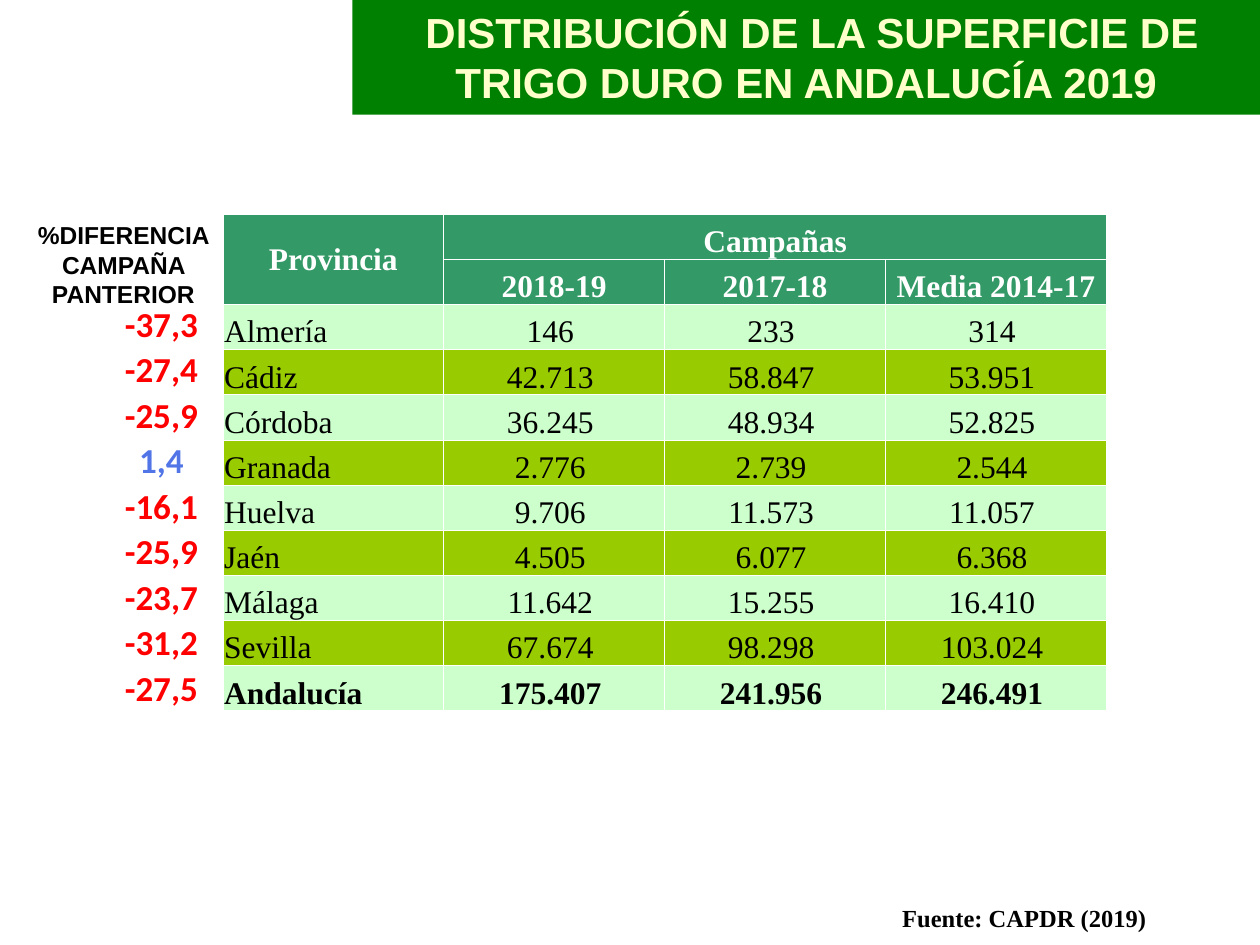
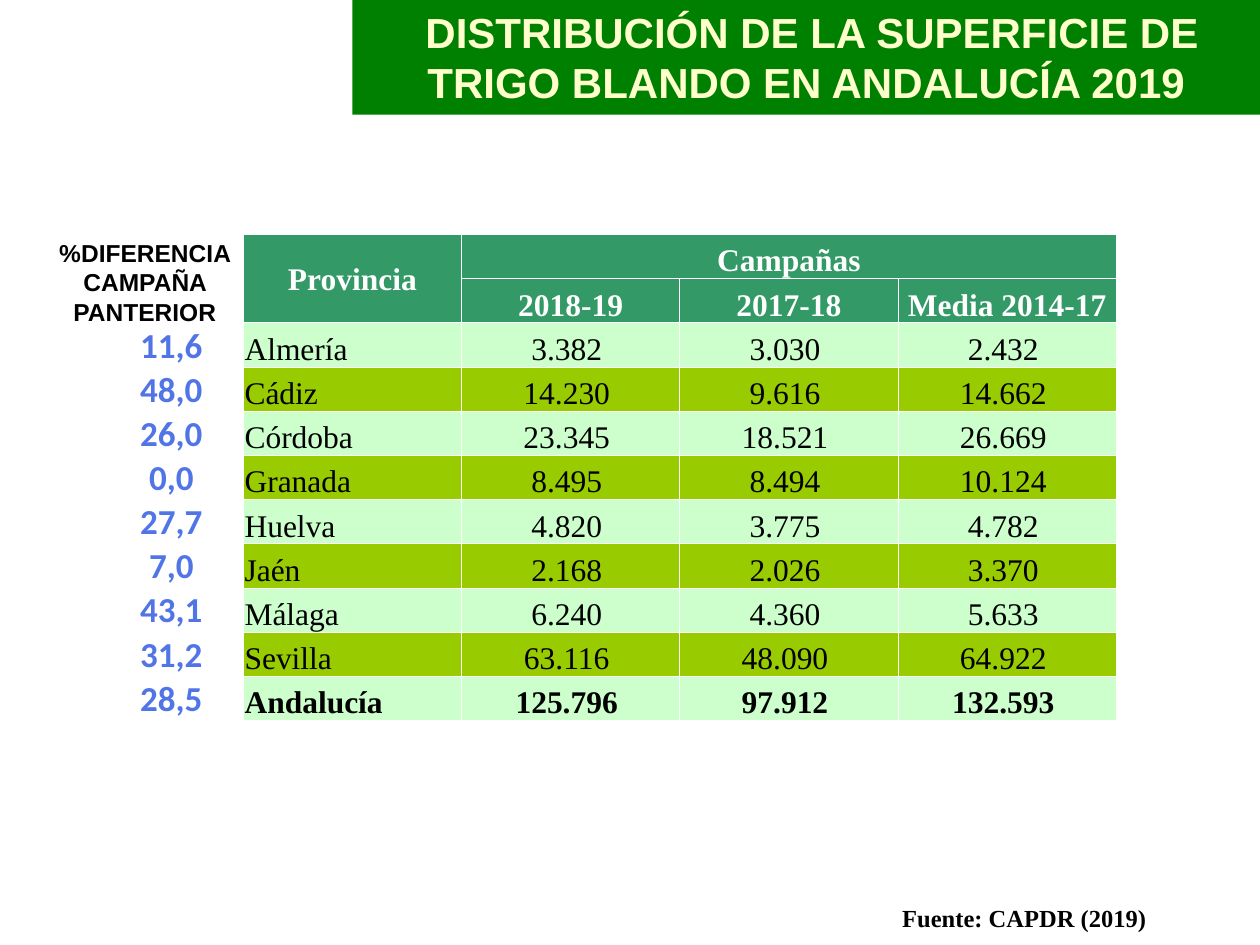
"""Build two slides on the area of durum and soft wheat in Andalucía."""
from lxml.etree import SubElement as Sub
from pptx import Presentation
from pptx.dml.color import RGBColor as Rgb
from pptx.enum.text import MSO_ANCHOR as Anchor, MSO_AUTO_SIZE as Fit, PP_ALIGN as Align
from pptx.oxml.ns import qn
from pptx.util import Pt

GREEN, CREAM, HEAD = "008000", "FFFFCC", "339966"
LIGHT, DARK = "CCFFCC", "99CC00"
WHITE, BLACK, RED, BLUE = "FFFFFF", "000000", "FF0000", "5175E7"
SANS, SERIF, DIGIT = "Arial", "Times New Roman", "Calibri"
AREAS = ["Almería", "Cádiz", "Córdoba", "Granada", "Huelva", "Jaén", "Málaga", "Sevilla", "Andalucía"]
YEARS = ["2018-19", "2017-18", "Media 2014-17"]
SPACE = 4.5

DURUM = dict(
    name="DURO", grid=(127.4, 122.4, 504.8, 25.8), diff=(59.8, 172.2, 26), label=(14.4, 122.4),
    rows=[
        ("146", "233", "314", "-37,3"),
        ("42.713", "58.847", "53.951", "-27,4"),
        ("36.245", "48.934", "52.825", "-25,9"),
        ("2.776", "2.739", "2.544", "1,4"),
        ("9.706", "11.573", "11.057", "-16,1"),
        ("4.505", "6.077", "6.368", "-25,9"),
        ("11.642", "15.255", "16.410", "-23,7"),
        ("67.674", "98.298", "103.024", "-31,2"),
        ("175.407", "241.956", "246.491", "-27,5"),
    ])
SOFT = dict(
    name="BLANDO", grid=(139, 134, 499, 25.26), diff=(65.5, 185, 25.2), label=(26.6, 132.5),
    rows=[
        ("3.382", "3.030", "2.432", "11,6"),
        ("14.230", "9.616", "14.662", "48,0"),
        ("23.345", "18.521", "26.669", "26,0"),
        ("8.495", "8.494", "10.124", "0,0"),
        ("4.820", "3.775", "4.782", "27,7"),
        ("2.168", "2.026", "3.370", "7,0"),
        ("6.240", "4.360", "5.633", "43,1"),
        ("63.116", "48.090", "64.922", "31,2"),
        ("125.796", "97.912", "132.593", "28,5"),
    ])


def tint(code):
    return Rgb.from_string(code)


def write(frame, text, size=18, font=SERIF, color=BLACK, bold=True, align=Align.CENTER):
    para = frame.paragraphs[0]
    para.alignment = align
    run = para.add_run()
    run.text = text
    run.font.size, run.font.name, run.font.bold = Pt(size), font, bold
    run.font.color.rgb = tint(color)


def edge(cell, color=WHITE, width=0.5):
    props = cell._tc.get_or_add_tcPr()
    for spot, side in enumerate("LRTB"):
        line = Sub(props, qn(f"a:ln{side}"), w=str(Pt(width)))
        Sub(Sub(line, qn("a:solidFill")), qn("a:srgbClr"), val=color)
        props.insert(spot, line)


class Deck:
    def __init__(self):
        self.file = Presentation()
        self.file.slide_width, self.file.slide_height = Pt(720), Pt(540)
        self.slide = None

    def start(self, text):
        self.slide = self.file.slides.add_slide(self.file.slide_layouts[5])
        band = self.slide.shapes.title
        band.left, band.top, band.width, band.height = Pt(201.4), Pt(0), Pt(518.6), Pt(65.5)
        band.fill.solid()
        band.fill.fore_color.rgb = tint(GREEN)
        frame = band.text_frame
        frame.word_wrap, frame.auto_size = True, Fit.NONE
        frame.vertical_anchor = Anchor.TOP
        write(frame, text, size=24, font=SANS, color=CREAM)

    def note(self, text, left, top, width, height, pad=7.2, **style):
        box = self.slide.shapes.add_textbox(Pt(left), Pt(top), Pt(width), Pt(height))
        frame = box.text_frame
        frame.word_wrap = True
        frame.margin_left = frame.margin_right = Pt(pad)
        write(frame, text, size=14, **style)

    def table(self, rows, cols, left, top, width, step):
        table = self.slide.shapes.add_table(
            rows, cols, Pt(left), Pt(top), Pt(width), Pt(rows * step)).table
        table.first_row = table.horz_banding = False
        for col in table.columns:
            col.width = Pt(width / cols)
        for row in table.rows:
            row.height = Pt(step)
        return table

    def cell(self, cell, text, fill=None, pad=0, anchor=Anchor.BOTTOM, **style):
        cell.margin_left = cell.margin_top = Pt(0.75)
        cell.margin_right, cell.margin_bottom = Pt(0.75 + pad), Pt(0)
        cell.vertical_anchor = anchor
        if fill:
            cell.fill.solid()
            cell.fill.fore_color.rgb = tint(fill)
            edge(cell)
        else:
            cell.fill.background()
        if text:
            write(cell.text_frame, text, **style)

    def grid(self, rows, place):
        table = self.table(len(rows) + 2, 4, *place)
        table.cell(0, 0).merge(table.cell(1, 0))
        table.cell(0, 1).merge(table.cell(0, 3))
        for r, texts in enumerate([["Provincia", "Campañas", "", ""], ["", *YEARS]]):
            for c, text in enumerate(texts):
                anchor = Anchor.BOTTOM if c else Anchor.MIDDLE
                self.cell(table.cell(r, c), text, fill=HEAD, anchor=anchor, color=WHITE)
        for r, (area, row) in enumerate(zip(AREAS, rows)):
            look = dict(fill=DARK if r % 2 else LIGHT, bold=area == AREAS[-1])
            self.cell(table.cell(r + 2, 0), area, align=Align.LEFT, **look)
            for c, text in enumerate(row[:3], 1):
                self.cell(table.cell(r + 2, c), text, pad=SPACE, **look)

    def diff(self, rows, left, top, step):
        table = self.table(len(rows), 1, left, top, 64.8, step)
        for r, row in enumerate(rows):
            color = RED if row[3].startswith("-") else BLUE
            self.cell(table.cell(r, 0), row[3], size=20, font=DIGIT, color=color)


def main():
    deck = Deck()
    for crop in (DURUM, SOFT):
        deck.start(f" DISTRIBUCIÓN DE LA SUPERFICIE DE TRIGO {crop['name']} EN ANDALUCÍA 2019")
        deck.note("Fuente: CAPDR (2019)", 450.7, 512.6, 269.3, 24.5)
        deck.grid(crop["rows"], crop["grid"])
        deck.diff(crop["rows"], *crop["diff"])
        deck.note("%DIFERENCIA CAMPAÑA PANTERIOR", *crop["label"], 112.3, 58.3, pad=5, font=SANS)
    deck.file.save("out.pptx")


if __name__ == "__main__":
    main()
